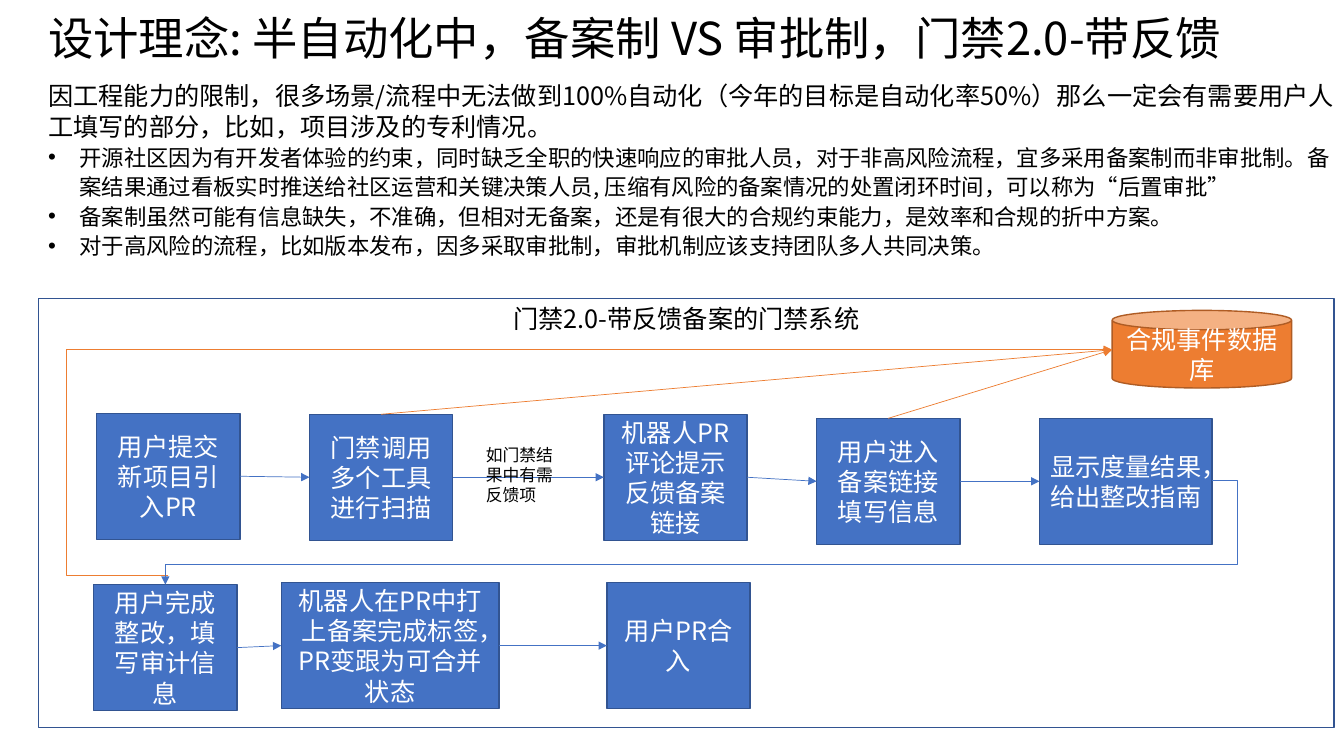
import pptx
import pptx.util
import pptx.dml.color
import pptx.enum.shapes
import pptx.enum.text
import pptx.oxml.ns
import lxml.etree

Inches = pptx.util.Inches
Pt = pptx.util.Pt
qn = pptx.oxml.ns.qn
SHAPES = pptx.enum.shapes.MSO_SHAPE
LINKS = pptx.enum.shapes.MSO_CONNECTOR
ANCHOR = pptx.enum.text.MSO_ANCHOR
ALIGN = pptx.enum.text.PP_ALIGN
FIT = pptx.enum.text.MSO_AUTO_SIZE

FONT = "Noto Sans CJK SC"
COLORS = {
    "ink": "000000",
    "white": "FFFFFF",
    "blue": "4472C4",
    "blue_edge": "325491",
    "orange": "ED7D31",
    "orange_edge": "AF5C24",
}
TOP, LEFT, RIGHT = 0, 1, 3

TITLE = "设计理念: 半自动化中，备案制 VS 审批制，门禁2.0-带反馈"
INTRO = "因工程能力的限制，很多场景/流程中无法做到100%自动化（今年的目标是自动化率50%）那么一定会有需要用户人工填写的部分，比如，项目涉及的专利情况。"
POINTS = [
    "开源社区因为有开发者体验的约束，同时缺乏全职的快速响应的审批人员，对于非高风险流程，宜多采用备案制而非审批制。备案结果通过看板实时推送给社区运营和关键决策人员, 压缩有风险的备案情况的处置闭环时间，可以称为“后置审批”",
    "备案制虽然可能有信息缺失，不准确，但相对无备案，还是有很大的合规约束能力，是效率和合规的折中方案。",
    "对于高风险的流程，比如版本发布，因多采取审批制，审批机制应该支持团队多人共同决策。",
]
STEP_HEIGHT = 1.25
STEPS = {
    "submit": (0.58, 1.14, 1.42, "用户提交新项目引入PR"),
    "scan": (2.69, 1.15, 1.42, "门禁调用多个工具进行扫描"),
    "comment": (5.61, 1.15, 1.42, "机器人PR评论提示反馈备案链接"),
    "record": (7.72, 1.19, 1.42, "用户进入备案链接填写信息"),
    "guide": (9.93, 1.19, 1.71, "显示度量结果，给出整改指南"),
    "audit": (0.55, 2.84, 1.42, "用户完成整改，填写审计信息"),
    "label": (2.41, 2.82, 2.16, "机器人在PR中打上备案完成标签，PR变跟为可合并状态"),
    "merge": (5.64, 2.82, 1.42, "用户PR合入"),
}
ROWS = [["submit", "scan", "comment", "record", "guide"], ["audit", "label", "merge"]]


def color(name):
    return pptx.dml.color.RGBColor.from_string(COLORS[name])


def apply(target, values):
    for name, value in values.items():
        setattr(target, name, value)


def write(para, text, size, ink="ink", **layout):
    apply(para, layout)
    para._p.get_or_add_pPr().set("hangingPunct", "1")
    span = para.add_run()
    span.text = text
    apply(span.font, {"size": Pt(size), "name": FONT})
    span.font.color.rgb = color(ink)
    lxml.etree.SubElement(span._r.get_or_add_rPr(), qn("a:ea"), typeface=FONT)


def add_bullet(para):
    props = para._p.get_or_add_pPr()
    props.set("marL", str(Inches(0.31)))
    props.set("indent", str(-Inches(0.31)))
    lxml.etree.SubElement(props, qn("a:buFont"), typeface="Arial")
    lxml.etree.SubElement(props, qn("a:buChar"), char="•")


def add_text(page, box, **frame_format):
    frame = page.shapes.add_textbox(*map(Inches, box)).text_frame
    apply(frame, {"word_wrap": True, **frame_format})
    return frame


def add_block(page, kind, box, text, fill, edge, ink="white", anchor=ANCHOR.MIDDLE):
    block = page.shapes.add_shape(kind, *map(Inches, box))
    block.shadow.inherit = False
    if fill:
        block.fill.solid()
        block.fill.fore_color.rgb = color(fill)
    else:
        block.fill.background()
    block.line.color.rgb = color(edge)
    block.line.width = Pt(1)
    apply(block.text_frame, {"word_wrap": True, "vertical_anchor": anchor})
    write(block.text_frame.paragraphs[0], text, 18, ink, alignment=ALIGN.CENTER)
    return block


def add_arrow(page, start, end, tint="blue", kind=LINKS.STRAIGHT):
    arrow = page.shapes.add_connector(kind, *map(Inches, start + end))
    arrow.line.color.rgb = color(tint)
    arrow.line.width = Pt(0.5)
    lxml.etree.SubElement(arrow.line._get_or_add_ln(), qn("a:tailEnd"), type="triangle")
    lxml.etree.SubElement(arrow._element.spPr, qn("a:effectLst"))
    return arrow


def add_bent_arrow(page, start, end, tint, preset, bends):
    arrow = add_arrow(page, start, end, tint, LINKS.ELBOW)
    geometry = arrow._element.spPr.find(qn("a:prstGeom"))
    geometry.set("prst", preset)
    guides = geometry.get_or_add_avLst()
    for number, bend in enumerate(bends, 1):
        value = f"val {round(bend * 100000)}"
        lxml.etree.SubElement(guides, qn("a:gd"), name=f"adj{number}", fmla=value)


def add_title(page, box):
    frame = add_text(page, box, vertical_anchor=ANCHOR.MIDDLE)
    write(frame.paragraphs[0], TITLE, 32.4, line_spacing=0.9)


def add_principles(page, box):
    frame = add_text(page, box, auto_size=FIT.SHAPE_TO_FIT_TEXT)
    write(frame.paragraphs[0], INTRO, 18)
    for point in POINTS:
        para = frame.add_paragraph()
        write(para, point, 16, line_spacing=1.1)
        add_bullet(para)


def add_gate_flow(page, box):
    left, top, width, height = box
    add_block(page, SHAPES.RECTANGLE, box, "门禁2.0-带反馈备案的门禁系统",
              None, "blue_edge", "ink", ANCHOR.TOP)

    steps = {}
    for name, (across, down, step_width, text) in STEPS.items():
        place = (left + across, top + down, step_width, STEP_HEIGHT)
        steps[name] = add_block(page, SHAPES.RECTANGLE, place, text, "blue", "blue_edge")
    for row in ROWS:
        for before, after in zip(row, row[1:]):
            arrow = add_arrow(page, (left, top), (left, top))
            arrow.begin_connect(steps[before], RIGHT)
            arrow.end_connect(steps[after], LEFT)

    note = add_text(page, (left + 4.34, top + 1.4, 0.97, 0.71),
                    auto_size=FIT.SHAPE_TO_FIT_TEXT)
    write(note.paragraphs[0], "如门禁结果中有需反馈项", 12)

    add_block(page, SHAPES.CAN, (left + 10.65, top + 0.12, 1.78, 0.77),
              "合规事件数据库", "orange", "orange_edge")
    database = (left + 10.65, top + 0.51)
    for name in ("scan", "record"):
        across, down, step_width, _ = STEPS[name]
        arrow = add_arrow(page, (left + across + step_width / 2, top + down),
                          database, "orange")
        arrow.begin_connect(steps[name], TOP)
    add_bent_arrow(page, (left + 1.29, top + 2.75), database, "orange",
                   "bentConnector3", [-0.108])
    add_bent_arrow(page, (left + 11.64, top + 1.81), (left + 1.26, top + 2.84), "blue",
                   "bentConnector4", [-0.024, 0.801])


def main():
    deck = pptx.Presentation()
    apply(deck, {"slide_width": Inches(13.33), "slide_height": Inches(7.5)})
    page = deck.slides.add_slide(deck.slide_layouts[6])
    add_title(page, (0.38, 0.03, 12.69, 0.76))
    add_principles(page, (0.38, 0.75, 13.09, 2.19))
    add_gate_flow(page, (0.38, 2.96, 12.85, 4.26))
    deck.save("out.pptx")


if __name__ == "__main__":
    main()
